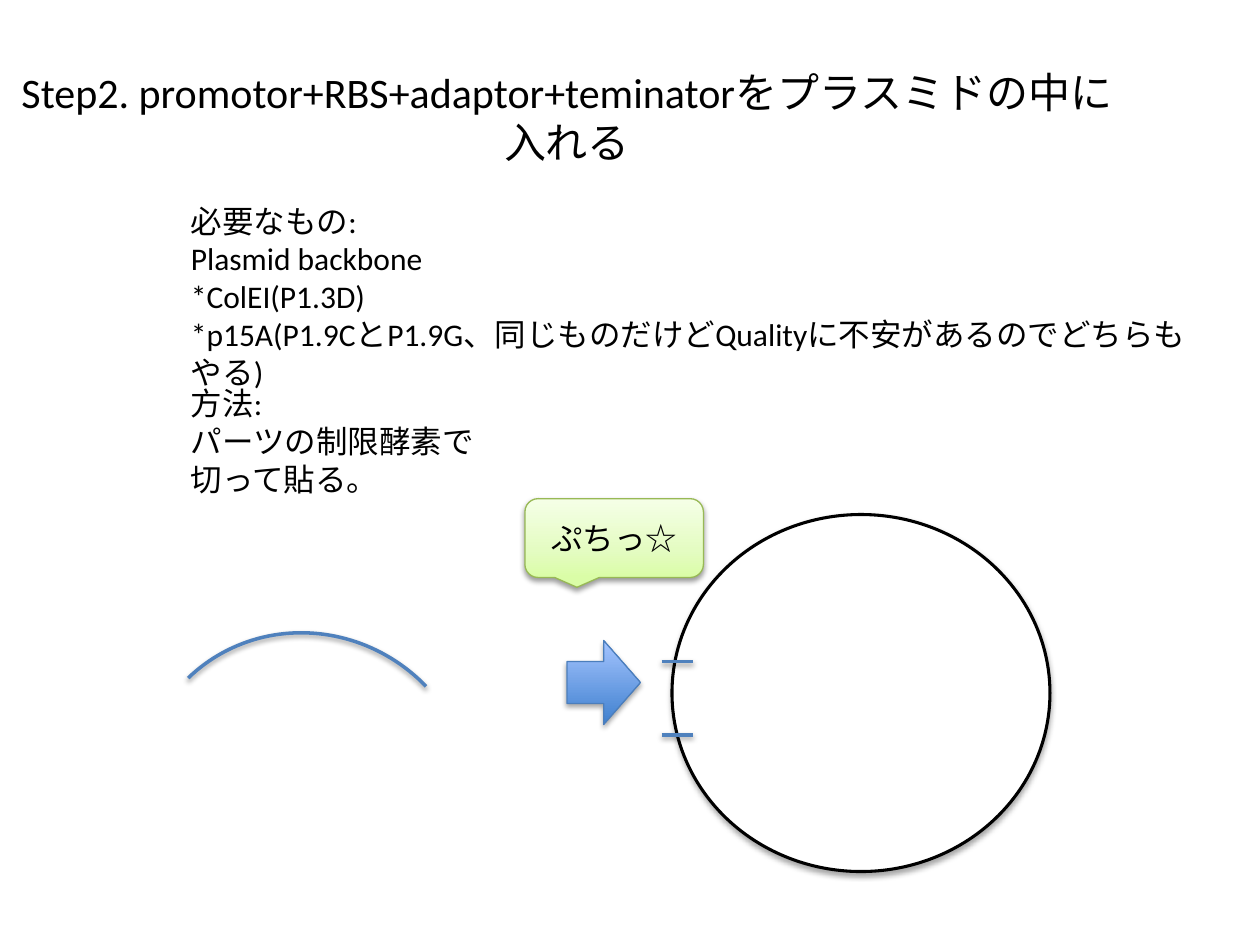
from copy import deepcopy
from dataclasses import dataclass

from lxml import etree
from pptx import Presentation
from pptx.dml.color import RGBColor
from pptx.enum.shapes import MSO_CONNECTOR, MSO_SHAPE
from pptx.enum.text import MSO_ANCHOR, MSO_AUTO_SIZE, PP_ALIGN
from pptx.oxml.ns import nsdecls, qn
from pptx.util import Inches, Pt

STRAIGHT = MSO_CONNECTOR.STRAIGHT
ELLIPSE, ARROW = MSO_SHAPE.OVAL, MSO_SHAPE.RIGHT_ARROW
ARC, CALLOUT = MSO_SHAPE.ARC, MSO_SHAPE.ROUNDED_RECTANGULAR_CALLOUT
MIDDLE, CENTER = MSO_ANCHOR.MIDDLE, PP_ALIGN.CENTER
FIT_SHAPE = MSO_AUTO_SIZE.SHAPE_TO_FIT_TEXT

BLACK = RGBColor(0x00, 0x00, 0x00)
WHITE = RGBColor(0xFF, 0xFF, 0xFF)
BLUE = RGBColor(0x4F, 0x81, 0xBD)
ARROW_EDGE = RGBColor(0x4B, 0x7E, 0xBC)
ARROW_DARK = RGBColor(0x3F, 0x80, 0xCE)
ARROW_LIGHT = RGBColor(0xA4, 0xC4, 0xFF)
GREEN_EDGE = RGBColor(0x98, 0xB9, 0x55)
GREEN_DARK = RGBColor(0xDA, 0xFD, 0xA7)
GREEN_MID = RGBColor(0xE4, 0xFC, 0xC2)
GREEN_LIGHT = RGBColor(0xF5, 0xFF, 0xE7)

FONT = "Calibri"
CELL = Inches(1) // 12  # the slide is 120 columns by 90 rows


@dataclass(frozen=True)
class Box:
    """A place on the grid, in columns and rows."""
    col: float
    row: float
    cols: float
    rows: float

    def lengths(self) -> tuple[int, ...]:
        return tuple(round(n * CELL) for n in (self.col, self.row, self.cols, self.rows))


@dataclass(frozen=True)
class Shadow:
    opacity: int
    distance: float


@dataclass(frozen=True)
class Figure:
    preset: int
    box: Box
    edge: RGBColor
    edge_width: float
    shadow: Shadow
    stops: tuple[tuple[float, RGBColor], ...] = ()  # none, solid or gradient
    rotation: float = 0
    label: str = ""


SOFT = Shadow(35, 1.8)
FIRM = Shadow(38, 1.6)

TITLE = "Step2. promotor+RBS+adaptor+teminatorをプラスミドの中に入れる"
TITLE_BOX = Box(0, 3.6, 108, 15)
NOTES = [
    (Box(17, 36, 33.5, 12.1), ["方法:", "パーツの制限酵素で切って貼る。"]),
    (Box(17, 18.6, 97.8, 15.7), [
        "必要なもの:",
        "Plasmid backbone",
        "*ColEI(P1.3D)",
        "*p15A(P1.9CとP1.9G、同じものだけどQualityに不安があるのでどちらもやる)",
    ]),
]
FIGURES = [
    # Plasmid, insertion arrow, insert and speech balloon
    Figure(ELLIPSE, Box(64, 49, 36, 34), BLACK, 1.75, SOFT, ((0, WHITE),)),
    Figure(ARROW, Box(54, 61, 7, 8), ARROW_EDGE, 0.75, SOFT,
           ((0, ARROW_DARK), (1, ARROW_LIGHT))),
    Figure(ARC, Box(13.5, 60, 31.5, 32.6), BLUE, 2, FIRM, rotation=316),
    Figure(CALLOUT, Box(50, 47.5, 17, 7.5), GREEN_EDGE, 0.75, FIRM,
           ((0, GREEN_DARK), (0.35, GREEN_MID), (1, GREEN_LIGHT)), label="ぷちっ☆"),
]
CUT_COLUMNS = (63, 66)
CUT_ROWS = (63, 70)


def write(frame, lines: list[str], size: float, align=None) -> None:
    frame.word_wrap = True
    for i, line in enumerate(lines):
        paragraph = frame.paragraphs[0] if i == 0 else frame.add_paragraph()
        paragraph.text = line
        paragraph.alignment = align
        paragraph.font.size = Pt(size)
        paragraph.font.name = FONT
        paragraph.font.color.rgb = BLACK


def cast_shadow(shape, shadow: Shadow) -> None:
    shape._element.spPr.append(etree.fromstring(
        f'<a:effectLst {nsdecls("a")}>'
        f'<a:outerShdw blurRad="{Pt(3.1)}" dist="{Pt(shadow.distance)}" dir="5400000" rotWithShape="0">'
        f'<a:srgbClr val="{BLACK}"><a:alpha val="{shadow.opacity * 1000}"/></a:srgbClr>'
        '</a:outerShdw></a:effectLst>'))


def paint(shape, stops: tuple[tuple[float, RGBColor], ...]) -> None:
    fill = shape.fill
    if not stops:
        fill.background()
    elif len(stops) == 1:
        fill.solid()
        fill.fore_color.rgb = stops[0][1]
    else:
        fill.gradient()
        fill.gradient_angle = 90
        stop_list = shape._element.spPr.find(".//" + qn("a:gsLst"))
        for _ in range(len(stops) - len(stop_list)):
            stop_list.append(deepcopy(stop_list[-1]))
        for stop, (position, color) in zip(fill.gradient_stops, stops):
            stop.position = position
            stop.color.rgb = color


def outline(shape, color: RGBColor, width: float, shadow: Shadow) -> None:
    shape.line.color.rgb = color
    shape.line.width = Pt(width)
    cast_shadow(shape, shadow)


def draw_figure(slide, figure: Figure) -> None:
    shape = slide.shapes.add_shape(figure.preset, *figure.box.lengths())
    shape.rotation = figure.rotation
    paint(shape, figure.stops)
    outline(shape, figure.edge, figure.edge_width, figure.shadow)
    if figure.label:
        shape.text_frame.vertical_anchor = MIDDLE
        write(shape.text_frame, [figure.label], 18, CENTER)


def draw_cut(slide, row: float) -> None:
    left, right = (col * CELL for col in CUT_COLUMNS)
    cut = slide.shapes.add_connector(STRAIGHT, left, row * CELL, right, row * CELL)
    outline(cut, BLUE, 2, FIRM)


def main() -> None:
    prs = Presentation()
    prs.slide_width, prs.slide_height = 120 * CELL, 90 * CELL
    slide = prs.slides.add_slide(prs.slide_layouts[5])

    # Title
    title = slide.shapes.title
    title.left, title.top, title.width, title.height = TITLE_BOX.lengths()
    title.text_frame.vertical_anchor = MIDDLE
    write(title.text_frame, [TITLE], 24, CENTER)

    # Method and materials
    for box, lines in NOTES:
        frame = slide.shapes.add_textbox(*box.lengths()).text_frame
        frame.auto_size = FIT_SHAPE
        write(frame, lines, 18)

    # Diagram with the two cutting sites
    for figure in FIGURES:
        draw_figure(slide, figure)
    for row in CUT_ROWS:
        draw_cut(slide, row)

    prs.save("out.pptx")


if __name__ == "__main__":
    main()
